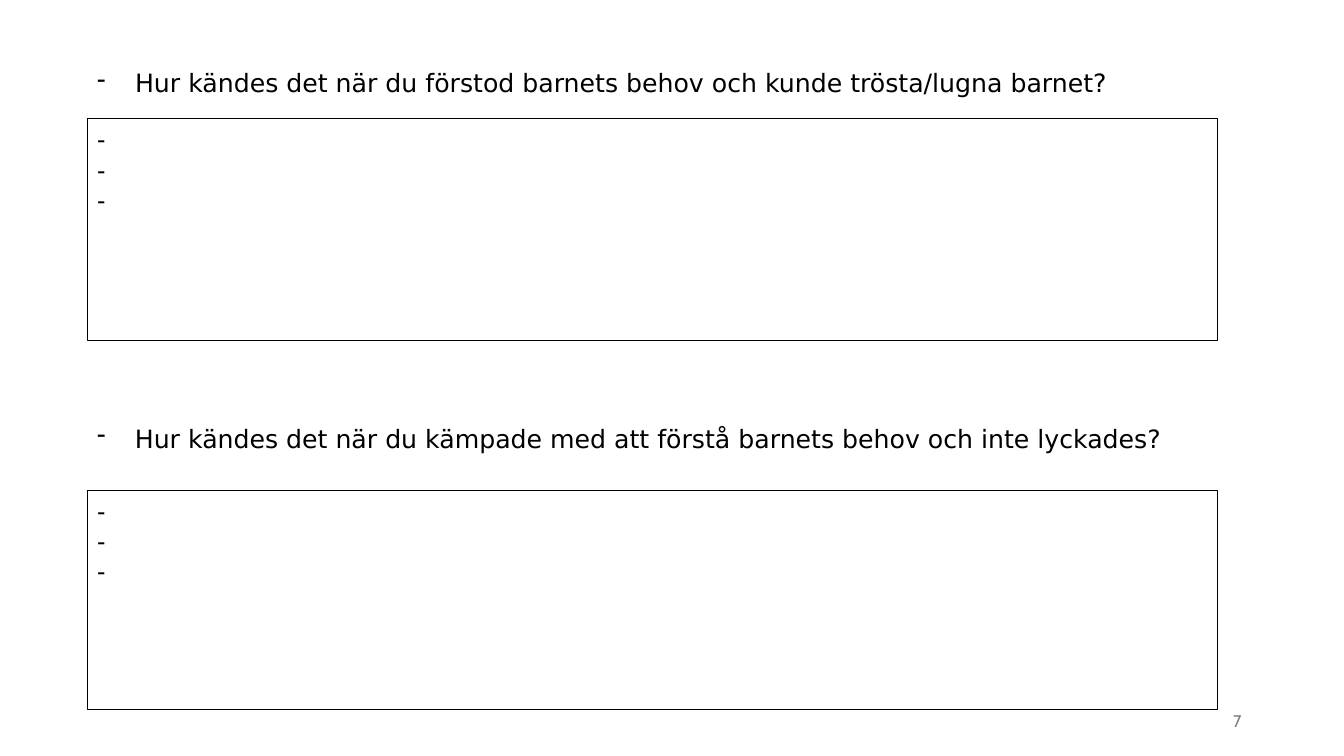
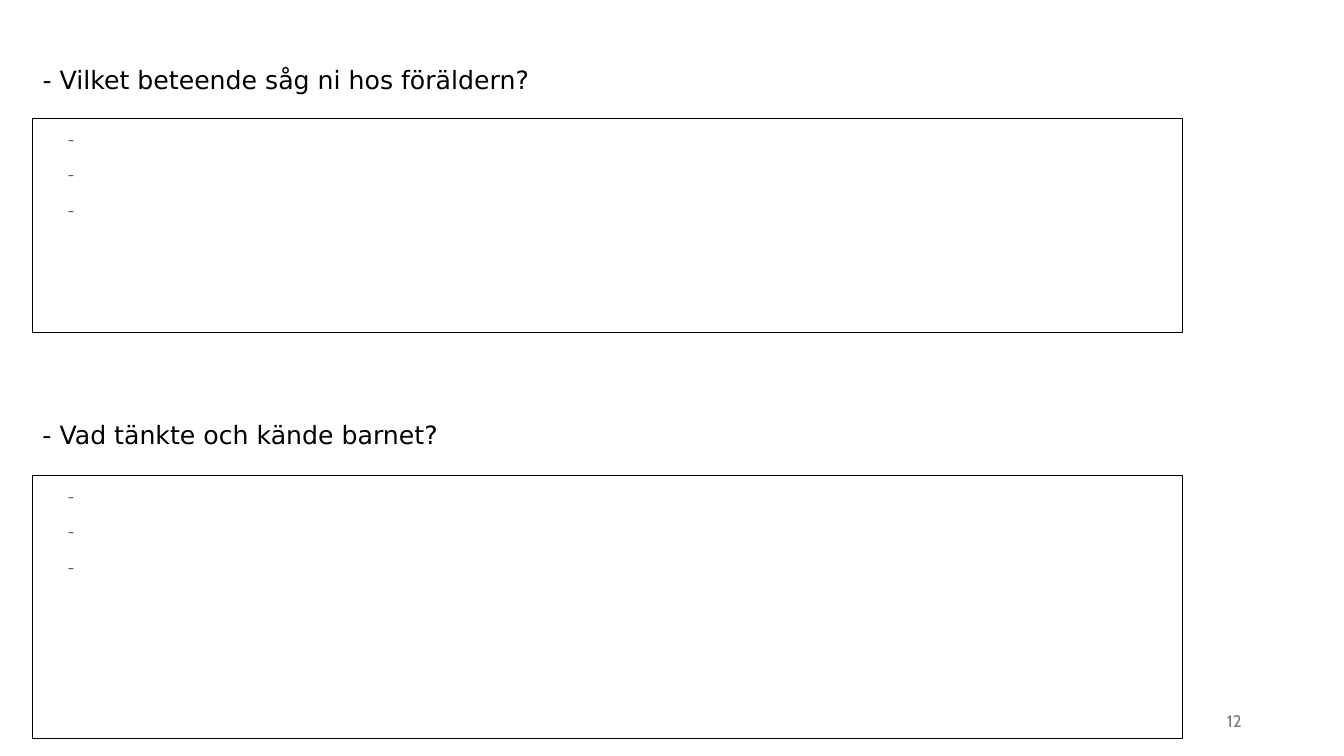
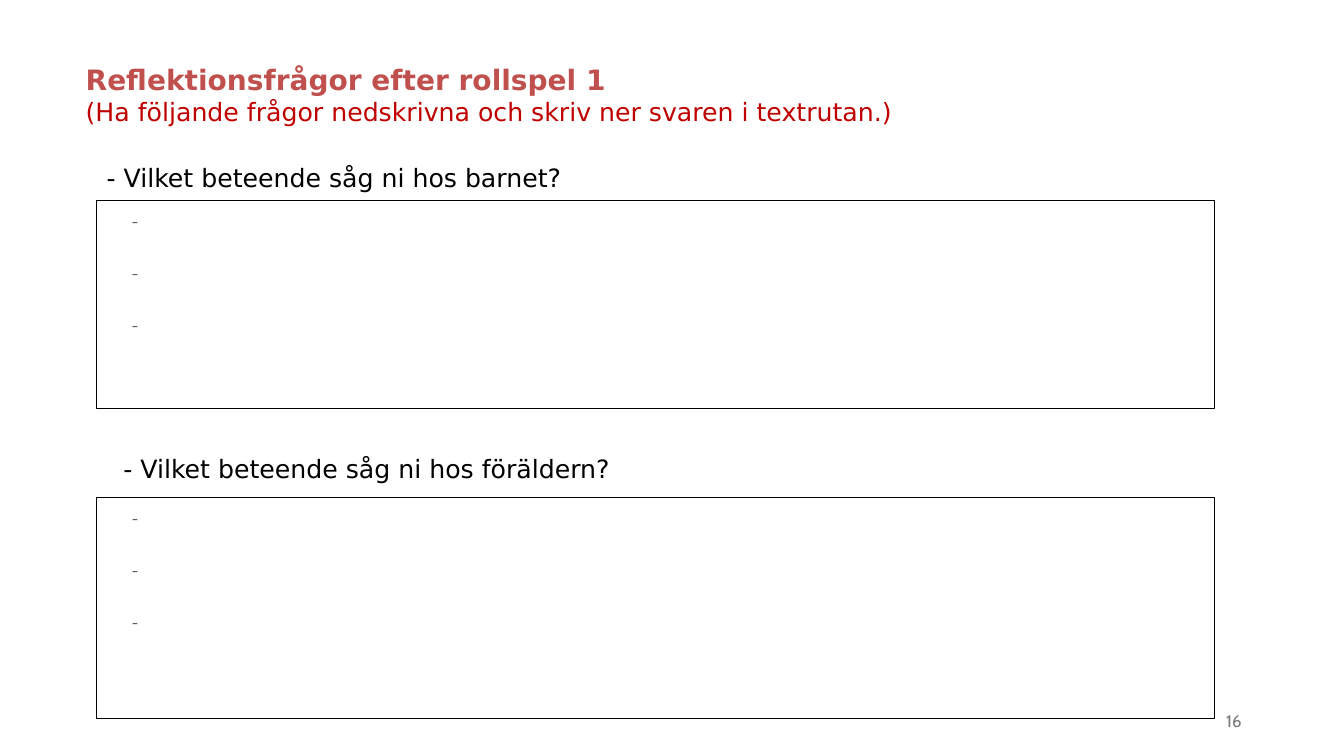
from lxml.etree import SubElement
from pptx import Presentation
from pptx.dml.color import RGBColor
from pptx.enum.shapes import MSO_SHAPE
from pptx.enum.text import MSO_ANCHOR, MSO_AUTO_SIZE, PP_ALIGN
from pptx.oxml.ns import qn
from pptx.util import Pt

PX = 9525
COLORS = {
    "paper": "FFFFFF",
    "ink": "000000",
    "heading": "C0504D",
    "note": "C00000",
    "answer": "595959",
    "number": "797979",
}
QUESTION = {"name": "DejaVu Sans", "size": Pt(18), "bold": False, "color": "ink"}
HEADING = QUESTION | {"size": Pt(20), "bold": True, "color": "heading"}
NOTE = QUESTION | {"color": "note"}
PLAIN = {"name": "Arial", "size": Pt(18), "color": "ink"}
ANSWER = {"name": "Cambria", "size": Pt(15), "color": "answer"}
NUMBER = {"name": "Cabin", "size": Pt(12), "color": "number"}
SPACED = {"line_spacing": 1.07, "space_after": Pt(6)}
AIRY = SPACED | {"space_before": Pt(12)}
BULLET_INDENT = (36, -36)
ANSWER_INDENT = (48, -24)


def rgb(name):
    return RGBColor.from_string(COLORS[name])


def set_all(target, values):
    for name, value in values.items():
        setattr(target, name, value)


class Deck:
    def __init__(self):
        self.prs = Presentation()
        self.prs.slide_width, self.prs.slide_height = 1280 * PX, 720 * PX
        self.s = None

    def slide(self, number):
        self.s = self.prs.slides.add_slide(self.prs.slide_layouts[5])
        tf = self.box((904, 667, 288, 38)).text_frame
        self.fill_text(tf, [(number, NUMBER)], {"alignment": PP_ALIGN.RIGHT},
                       anchor=MSO_ANCHOR.MIDDLE)

    def box(self, at):
        return self.s.shapes.add_textbox(*(v * PX for v in at))

    def fill_text(self, tf, lines, para=None, indent=None, bullet=None,
                  anchor=MSO_ANCHOR.TOP):
        set_all(tf, {"word_wrap": True, "auto_size": MSO_AUTO_SIZE.NONE,
                     "vertical_anchor": anchor})
        for i, (text, font) in enumerate(lines):
            p = tf.paragraphs[0] if i == 0 else tf.add_paragraph()
            set_all(p, {"alignment": PP_ALIGN.LEFT} | (para or {}))
            pPr = p._p.get_or_add_pPr()
            if indent:
                for key, value in zip(("marL", "indent"), indent):
                    pPr.set(key, str(value * PX))
            if bullet:
                SubElement(pPr, qn("a:buChar")).set("char", bullet)
            r = p.add_run()
            r.text = text
            set_all(r.font, {k: v for k, v in font.items() if k != "color"})
            r.font.color.rgb = rgb(font["color"])

    def title(self, at, lines, **style):
        sp = self.s.shapes.title
        set_all(sp, dict(zip(("left", "top", "width", "height"), (v * PX for v in at))))
        self.fill_text(sp.text_frame, lines, **style)

    def question(self, at, text, **style):
        self.fill_text(self.box(at).text_frame, [(text, QUESTION)], **style)

    def answers(self, at, font, **style):
        sp = self.s.shapes.add_shape(MSO_SHAPE.RECTANGLE, *(v * PX for v in at))
        sp.shadow.inherit = False
        sp.fill.solid()
        sp.fill.fore_color.rgb = rgb("paper")
        sp.line.color.rgb = rgb("ink")
        sp.line.width = Pt(0.75)
        self.fill_text(sp.text_frame, [("-", font)] * 3, **style)


def main():
    deck = Deck()

    deck.slide("7")
    bulleted = {"para": SPACED, "indent": BULLET_INDENT, "bullet": "-"}
    deck.title((83, 57, 1030, 38), [(
        "Hur kändes det när du förstod barnets behov och kunde trösta/lugna barnet?",
        QUESTION)], **bulleted)
    deck.answers((83, 113, 1077, 211), PLAIN)
    deck.question((83, 396, 1061, 38),
                  "Hur kändes det när du kämpade med att förstå barnets behov och inte lyckades?",
                  **bulleted)
    deck.answers((83, 467, 1077, 209), PLAIN)

    deck.slide("12")
    deck.title((31, 56, 1134, 38), [("- Vilket beteende såg ni hos föräldern?", QUESTION)])
    deck.question((31, 395, 640, 38), "- Vad tänkte och kände barnet?")
    for top, height in ((113, 204), (453, 250)):
        deck.answers((31, top, 1095, height), ANSWER, para=SPACED, indent=ANSWER_INDENT)

    deck.slide("16")
    deck.title((72, 55, 859, 71), [
        ("Reflektionsfrågor efter rollspel 1", HEADING),
        ("(Ha följande frågor nedskrivna och skriv ner svaren i textrutan.)", NOTE)])
    deck.question((92, 150, 640, 38), "- Vilket beteende såg ni hos barnet?")
    deck.question((108, 427, 1134, 38), "- Vilket beteende såg ni hos föräldern?")
    for top, height in ((191, 198), (474, 210)):
        deck.answers((92, top, 1065, height), ANSWER, para=AIRY, indent=ANSWER_INDENT)

    deck.prs.save("out.pptx")


if __name__ == "__main__":
    main()
